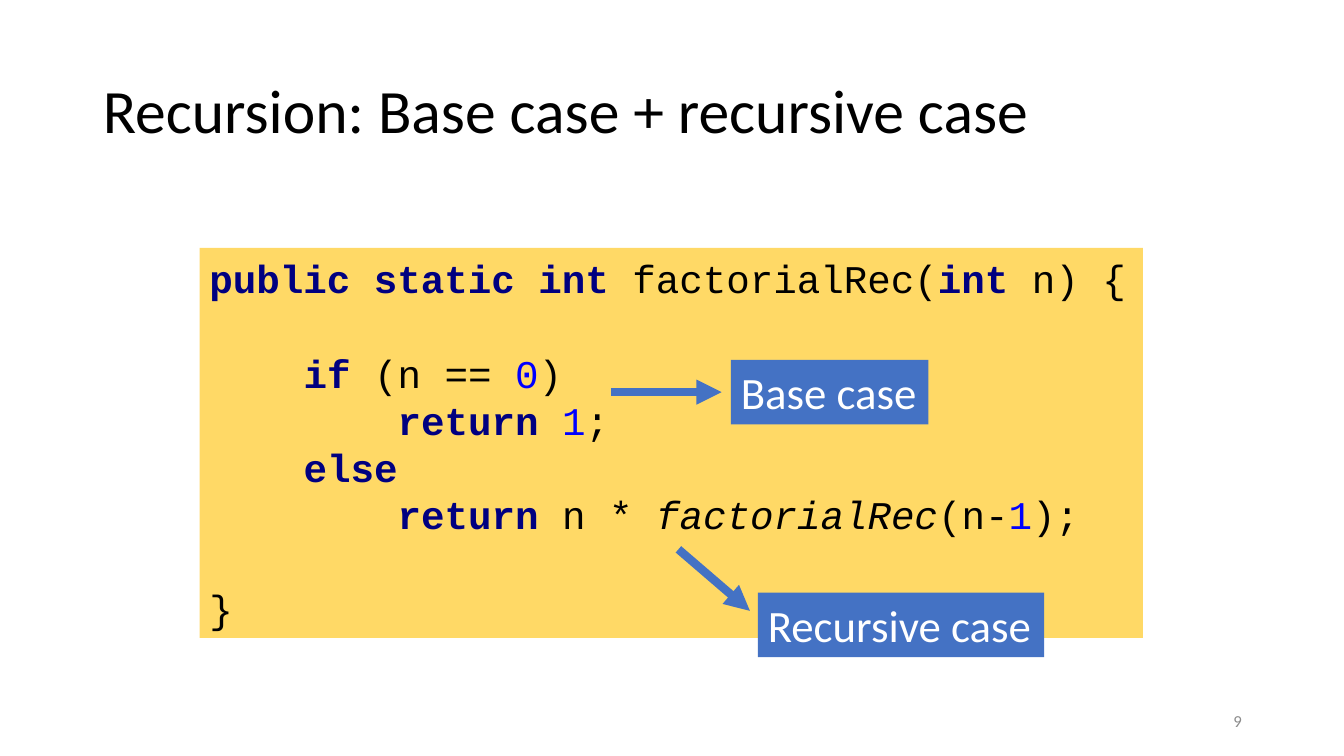
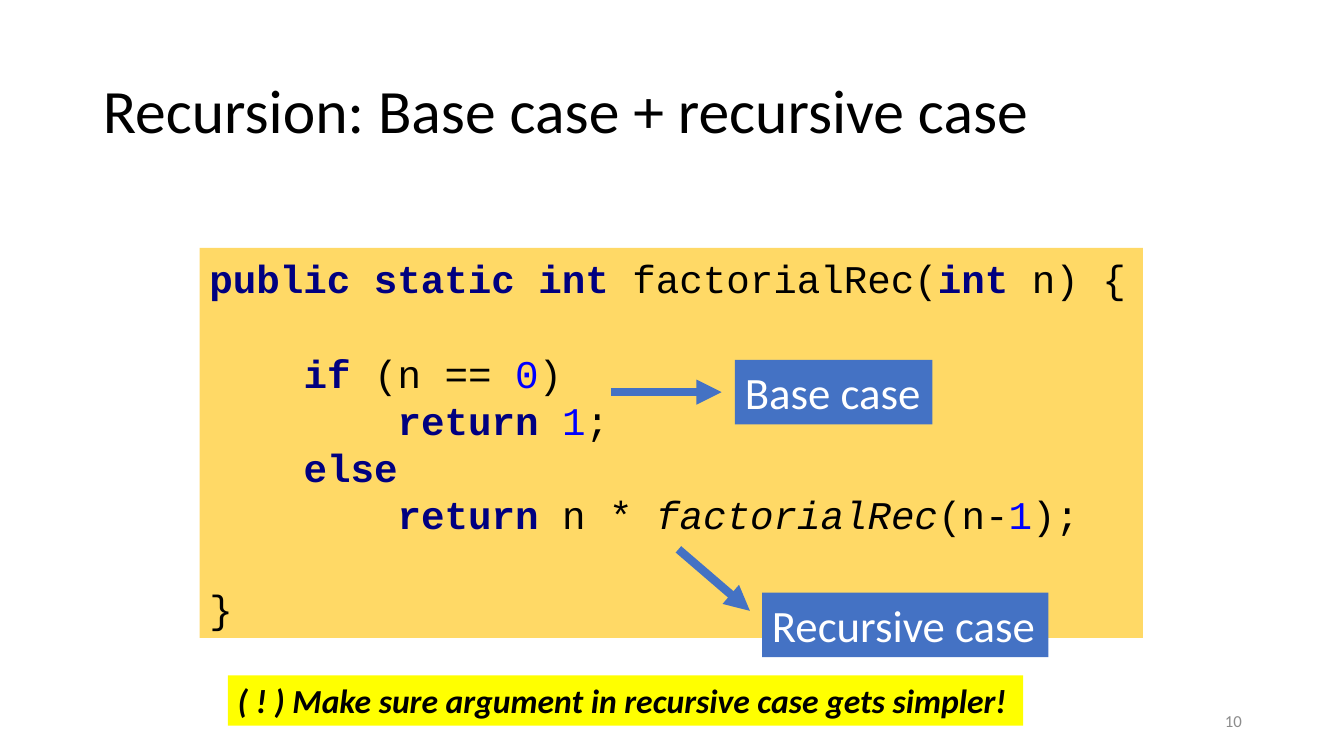
"""Build two slides that explain the base case and the recursive case."""
from dataclasses import dataclass

from lxml import etree
from pptx import Presentation
from pptx.dml.color import RGBColor
from pptx.enum.shapes import MSO_CONNECTOR, MSO_SHAPE
from pptx.enum.text import MSO_ANCHOR, PP_ALIGN
from pptx.oxml.ns import qn
from pptx.util import Inches, Pt

RECTANGLE = MSO_SHAPE.RECTANGLE
STRAIGHT = MSO_CONNECTOR.STRAIGHT
TOP, MIDDLE = MSO_ANCHOR.TOP, MSO_ANCHOR.MIDDLE
LEFT, RIGHT = PP_ALIGN.LEFT, PP_ALIGN.RIGHT


@dataclass(frozen=True)
class Theme:
    ink: str = "000000"
    white: str = "FFFFFF"
    grey: str = "8C8C8C"
    panel: str = "FFD966"
    accent: str = "4472C4"
    marker: str = "FFFF00"
    keyword: str = "000080"
    literal: str = "0000FF"
    body_font: str = "Calibri"
    code_font: str = "Courier New"
    title_size: int = 44
    label_size: int = 32
    code_size: int = 28
    note_size: int = 24
    number_size: int = 12
    arrow_width: int = 6


theme = Theme()


def style(name, size, color, bold=False, italic=False):
    return {"name": name, "size": Pt(size), "bold": bold, "italic": italic, "color": color}


def write(paragraph, text, look, align=LEFT):
    paragraph.alignment = align
    run = paragraph.add_run()
    run.text = text
    for attribute, value in look.items():
        if attribute == "color":
            run.font.color.rgb = RGBColor.from_string(value)
        else:
            setattr(run.font, attribute, value)


title_style = style(theme.body_font, theme.title_size, theme.ink)
number_style = style(theme.body_font, theme.number_size, theme.grey)
label_style = style(theme.body_font, theme.label_size, theme.white)
note_style = style(theme.body_font, theme.note_size, theme.ink, bold=True, italic=True)
plain = style(theme.code_font, theme.code_size, theme.ink)
keyword = plain | {"color": theme.keyword, "bold": True}
literal = plain | {"color": theme.literal}
call = plain | {"italic": True}

code_lines = [
    (0, 0, [("public static int ", keyword), ("factorialRec(", plain),
            ("int ", keyword), ("n) {", plain)]),
    (1, 1, [("if ", keyword), ("(n == ", plain), ("0", literal), (")", plain)]),
    (2, 0, [("return ", keyword), ("1", literal), (";", plain)]),
    (1, 0, [("else", keyword)]),
    (2, 0, [("return ", keyword), ("n * ", plain), ("factorialRec", call),
            ("(n-", plain), ("1", literal), (");", plain)]),
    (0, 1, [("}", plain)]),
]
indent_step = Pt(4 * 0.6 * theme.code_size)
code_line_height = Pt(1.2 * theme.code_size)

presentation = Presentation()
presentation.slide_width, presentation.slide_height = Inches(13.33), Inches(7.5)
column, row = presentation.slide_width / 100, presentation.slide_height / 100
title_only = presentation.slide_layouts[5]

arrows = [(45.45, 51.87, 53.7, 51.87), (50.48, 72.67, 55.8, 80.8)]
labels = [("Base case", 54.38, 47.6, 14.7), ("Recursive case", 56.4, 78.4, 21.3)]
label_height = 8.53
note = ("( ! ) Make sure argument in recursive case gets simpler!",
        (16.95, 89.33, 59.18, 6.67), theme.marker, note_style)
pages = [(9, 0, []), (10, 0.3, [note])]

for page_number, label_shift, notes in pages:
    slide = presentation.slides.add_slide(title_only)

    title = slide.shapes.title
    title.left, title.top = int(6.9 * column), int(5.33 * row)
    title.width, title.height = int(86.25 * column), int(19.33 * row)
    title.text_frame.vertical_anchor = MIDDLE
    heading = title.text_frame.paragraphs[0]
    heading.line_spacing = 0.9
    write(heading, "Recursion: Base case + recursive case", title_style)

    footer = slide.shapes.add_textbox(int(70.65 * column), int(92.67 * row),
                                      int(22.5 * column), int(5.33 * row)).text_frame
    footer.word_wrap = True
    footer.vertical_anchor = MIDDLE
    write(footer.paragraphs[0], str(page_number), number_style, RIGHT)

    code = slide.shapes.add_shape(RECTANGLE, int(14.85 * column), int(32.8 * row),
                                  int(70.2 * column), int(51.6 * row))
    code.shadow.inherit = False
    code.fill.solid()
    code.fill.fore_color.rgb = RGBColor.from_string(theme.panel)
    code.line.fill.background()
    code.text_frame.word_wrap = True
    code.text_frame.vertical_anchor = MIDDLE
    for index, (level, gap, pieces) in enumerate(code_lines):
        line = code.text_frame.add_paragraph() if index else code.text_frame.paragraphs[0]
        line.space_before = gap * code_line_height
        line._p.get_or_add_pPr().set("marL", str(level * indent_step))
        for text, look in pieces:
            write(line, text, look)

    for start_x, start_y, end_x, end_y in arrows:
        arrow = slide.shapes.add_connector(STRAIGHT, int(start_x * column), int(start_y * row),
                                           int(end_x * column), int(end_y * row))
        arrow.line.color.rgb = RGBColor.from_string(theme.accent)
        arrow.line.width = Pt(theme.arrow_width)
        outline = arrow.element.spPr.find(qn("a:ln"))
        etree.SubElement(outline, qn("a:tailEnd"), type="triangle")
        etree.SubElement(arrow.element.spPr, qn("a:effectLst"))

    callouts = [(text, (x + label_shift, y, width, label_height), theme.accent, label_style)
                for text, x, y, width in labels]
    for text, (x, y, width, height), color, look in callouts + notes:
        callout = slide.shapes.add_shape(RECTANGLE, int(x * column), int(y * row),
                                         int(width * column), int(height * row))
        callout.shadow.inherit = False
        callout.fill.solid()
        callout.fill.fore_color.rgb = RGBColor.from_string(color)
        callout.line.fill.background()
        callout.text_frame.word_wrap = True
        callout.text_frame.vertical_anchor = TOP
        write(callout.text_frame.paragraphs[0], text, look)

presentation.save("out.pptx")
